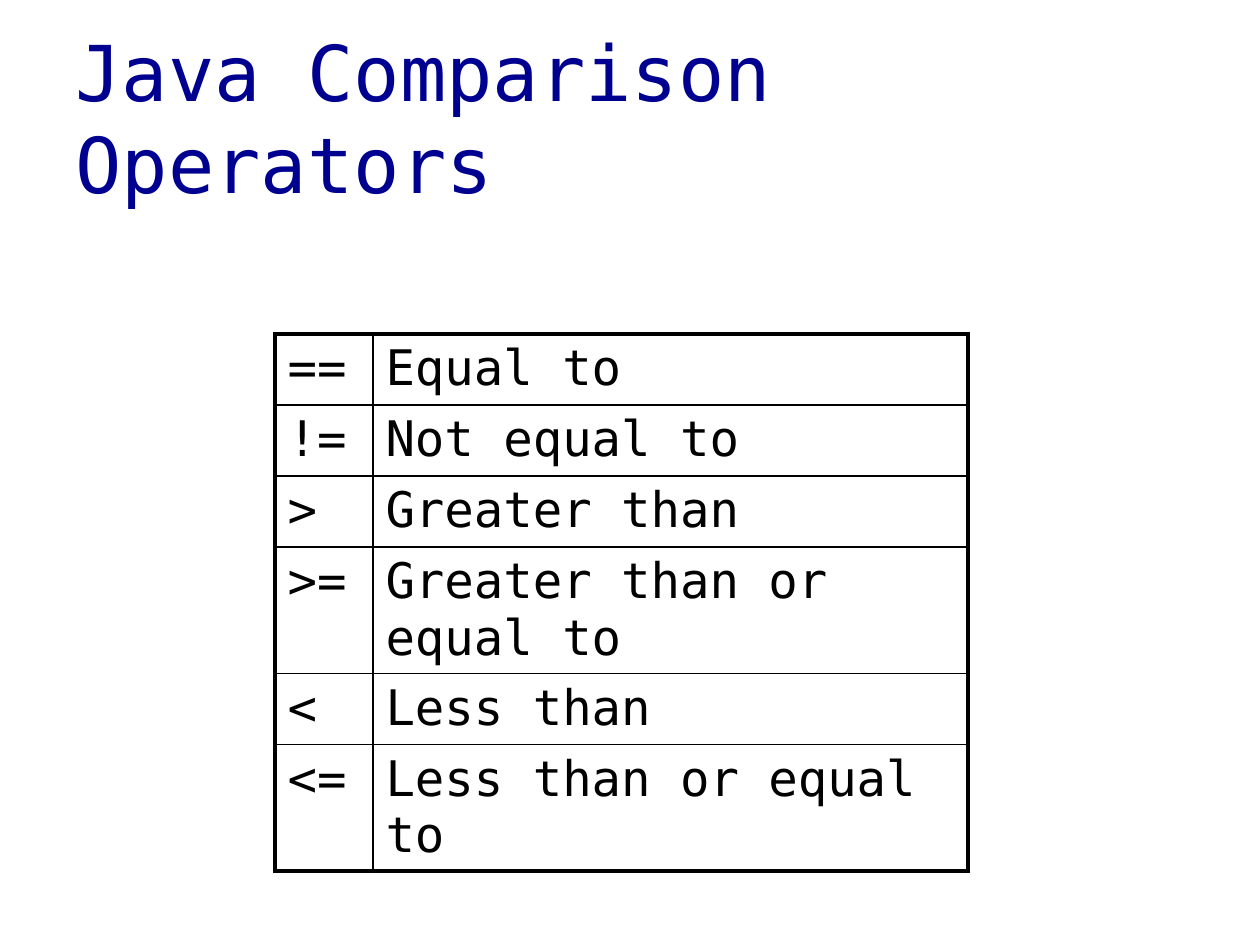
from lxml.etree import SubElement
from pptx import Presentation
from pptx.dml.color import RGBColor
from pptx.enum.text import MSO_ANCHOR, MSO_AUTO_SIZE, PP_ALIGN
from pptx.oxml.ns import qn
from pptx.util import Emu, Pt

EMU_PER_INCH = 914400
PX_PER_INCH = 126
FONT = "DejaVu Sans Mono"
COLORS = {"title": "000090", "text": "000000", "border": "000000"}
OPERATORS = [
    ("==", "Equal to"),
    ("!=", "Not equal to"),
    (">", "Greater than"),
    (">=", "Greater than or equal to"),
    ("<", "Less than"),
    ("<=", "Less than or equal to"),
]
COLUMN_WIDTHS = [98, 595]
ROW_HEIGHT = 71
OUTER_BORDER = 2.25
INNER_BORDER = 1


def px(length):
    return Emu(round(length * EMU_PER_INCH / PX_PER_INCH))


def write(text_frame, text, size, color):
    text_frame.text = text
    paragraph = text_frame.paragraphs[0]
    paragraph.alignment = PP_ALIGN.LEFT
    font = paragraph.runs[0].font
    font.name = FONT
    font.size = Pt(size)
    font.color.rgb = RGBColor.from_string(COLORS[color])


def add_title(slide, text):
    title = slide.shapes.title
    title.left, title.top, title.width, title.height = map(px, (63, 38, 1134, 158))
    title.text_frame.word_wrap = True
    title.text_frame.auto_size = MSO_AUTO_SIZE.NONE
    title.text_frame.vertical_anchor = MSO_ANCHOR.MIDDLE
    write(title.text_frame, text, 44, "title")


def set_borders(cell, outer_edges):
    properties = cell._tc.get_or_add_tcPr()
    for edge, is_outer in outer_edges.items():
        width = OUTER_BORDER if is_outer else INNER_BORDER
        line = SubElement(properties, qn(f"a:ln{edge}"), w=str(Pt(width)))
        fill = SubElement(line, qn("a:solidFill"))
        SubElement(fill, qn("a:srgbClr"), val=COLORS["border"])


def add_operator_table(slide, left, top):
    row_count, column_count = len(OPERATORS), len(COLUMN_WIDTHS)
    table = slide.shapes.add_table(
        row_count, column_count, px(left), px(top),
        px(sum(COLUMN_WIDTHS)), px(ROW_HEIGHT * row_count),
    ).table
    table.first_row = False
    table.horz_banding = False
    for column, width in zip(table.columns, COLUMN_WIDTHS):
        column.width = px(width)
    for row_index, entry in enumerate(OPERATORS):
        table.rows[row_index].height = px(ROW_HEIGHT)
        for column_index, text in enumerate(entry):
            cell = table.cell(row_index, column_index)
            write(cell.text_frame, text, 28, "text")
            set_borders(cell, {
                "L": column_index == 0,
                "R": column_index == column_count - 1,
                "T": row_index == 0,
                "B": row_index == row_count - 1,
            })
            cell.fill.background()


def main():
    presentation = Presentation()
    presentation.slide_width = px(1260)
    presentation.slide_height = px(945)
    slide = presentation.slides.add_slide(presentation.slide_layouts[5])
    add_title(slide, "Java Comparison Operators")
    add_operator_table(slide, 275, 334)
    presentation.save("out.pptx")


if __name__ == "__main__":
    main()
